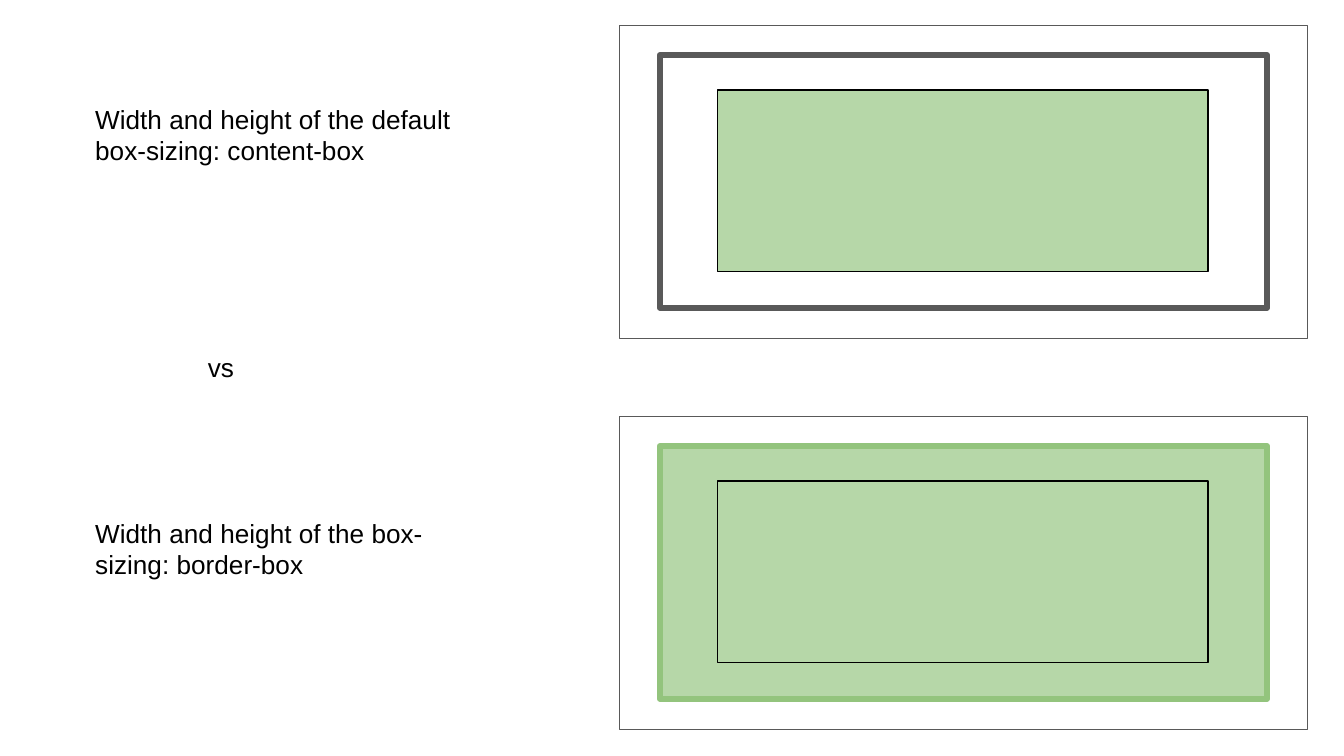
import pptx
import pptx.util
import pptx.dml.color
import pptx.enum.shapes
import pptx.enum.text

Cm = pptx.util.Cm
Pt = pptx.util.Pt
RGBColor = pptx.dml.color.RGBColor

BLACK = RGBColor(0x00, 0x00, 0x00)
GRAY = RGBColor(0x59, 0x59, 0x59)
LIGHT_GREEN = RGBColor(0xB6, 0xD7, 0xA8)
GREEN = RGBColor(0x93, 0xC4, 0x7D)

presentation = pptx.Presentation()
presentation.slide_width = Cm(25.4)
presentation.slide_height = Cm(14.29)
slide = presentation.slides.add_slide(presentation.slide_layouts[6])

models = [
    (0.48, None, GRAY),
    (7.87, LIGHT_GREEN, GREEN),
]
for top, border_fill, border_color in models:
    layers = [
        (11.71, 0, 13, 5.92, None, GRAY, 0.75),
        (12.47, 0.56, 11.48, 4.78, border_fill, border_color, 3),
        (13.56, 1.22, 9.27, 3.43, LIGHT_GREEN, BLACK, 0.75),
    ]
    for left, inset, width, height, fill, line, weight in layers:
        shape = slide.shapes.add_shape(
            pptx.enum.shapes.MSO_SHAPE.RECTANGLE,
            Cm(left), Cm(top + inset), Cm(width), Cm(height))
        shape.shadow.inherit = False
        if fill is None:
            shape.fill.background()
        else:
            shape.fill.solid()
            shape.fill.fore_color.rgb = fill
        shape.line.color.rgb = line
        shape.line.width = Pt(weight)

labels = [
    ("Width and height of the default box-sizing: content-box", 1.55, 1.7, 7.8, 1.7),
    ("vs", 3.68, 6.4, 2.92, 1.12),
    ("Width and height of the box-sizing: border-box", 1.55, 9.53, 7.8, 1.7),
]
for text, left, top, width, height in labels:
    label = slide.shapes.add_textbox(Cm(left), Cm(top), Cm(width), Cm(height))
    frame = label.text_frame
    frame.word_wrap = True
    frame.auto_size = pptx.enum.text.MSO_AUTO_SIZE.SHAPE_TO_FIT_TEXT
    frame.margin_left = frame.margin_right = Cm(0.25)
    frame.margin_top = frame.margin_bottom = Cm(0.25)
    run = frame.paragraphs[0].add_run()
    run.text = text
    run.font.name = "Arial"
    run.font.size = Pt(14)
    run.font.color.rgb = BLACK

presentation.save("out.pptx")
